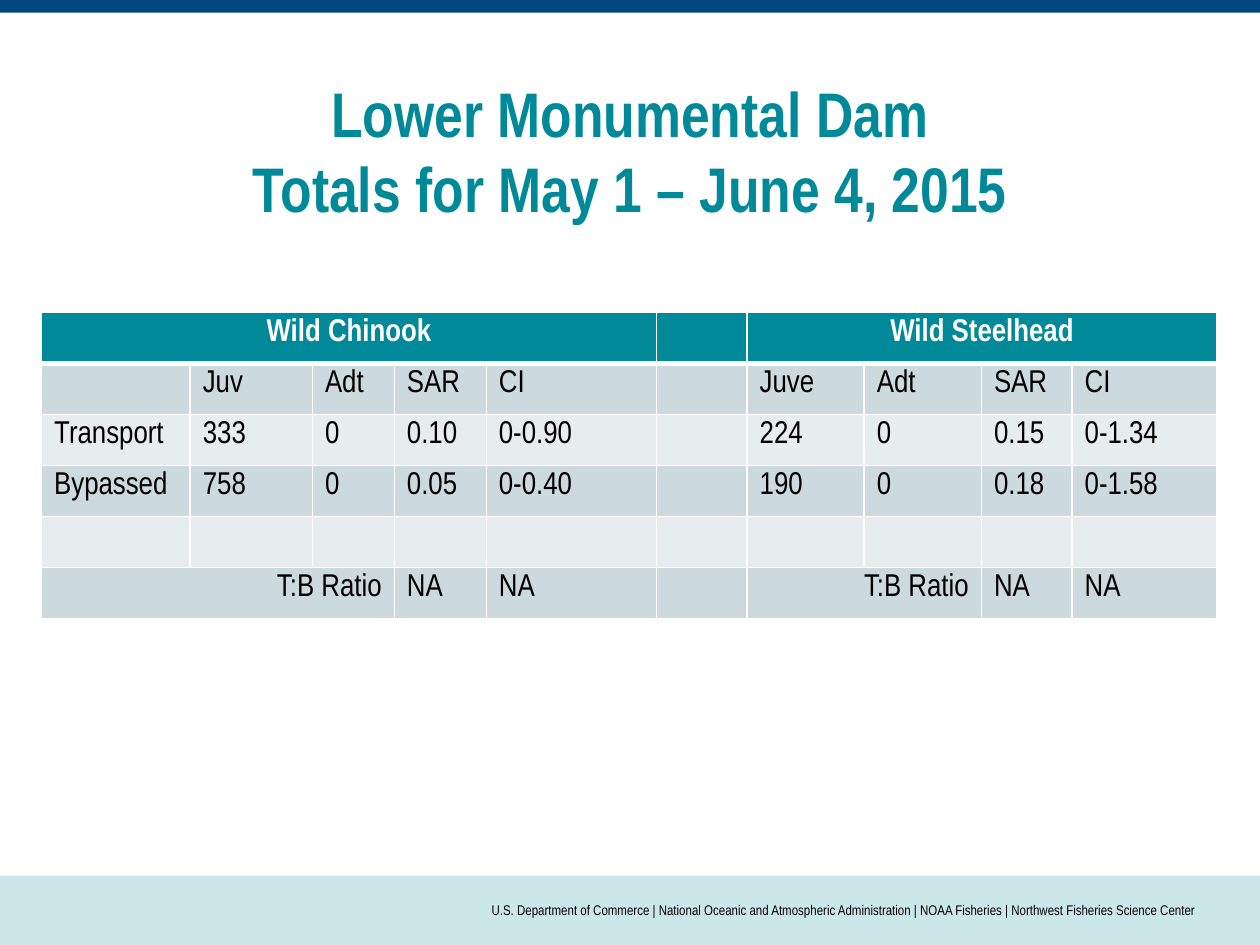
from lxml import etree
from pptx import Presentation
from pptx.dml.color import RGBColor
from pptx.enum import shapes, text
from pptx.oxml import ns
from pptx.util import Inches, Pt

FONT = "Arial Narrow"
WHITE = RGBColor(0xFF, 0xFF, 0xFF)
BLACK = RGBColor(0, 0, 0)
TEAL = RGBColor(0x00, 0x89, 0x98)
NAVY = RGBColor(0x00, 0x46, 0x7F)
PALE_TEAL = RGBColor(0xCC, 0xE7, 0xEA)
BANDS = (RGBColor(0xE7, 0xED, 0xEF), RGBColor(0xCC, 0xDA, 0xDD))

CENTER, RIGHT = text.PP_ALIGN.CENTER, text.PP_ALIGN.RIGHT
TITLE = {"name": FONT, "size": Pt(36), "bold": True}
FOOTER = {"name": FONT, "size": Pt(8), "bold": False}
HEADER = {"name": FONT, "size": Pt(18), "bold": True}
BODY = {"name": FONT, "size": Pt(18), "bold": False}

COLUMN_WIDTHS = (1.18, 0.97, 0.65, 0.73, 1.35, 0.72, 0.93, 0.93, 0.72, 1.15)
ROWS = (
    ("Wild Chinook", "", "", "", "", "", "Wild Steelhead", "", "", ""),
    ("", "Juv", "Adt", "SAR", "CI", "", "Juve", "Adt", "SAR", "CI"),
    ("Transport", "333", "0", "0.10", "0-0.90", "", "224", "0", "0.15", "0-1.34"),
    ("Bypassed", "758", "0", "0.05", "0-0.40", "", "190", "0", "0.18", "0-1.58"),
    ("",) * 10,
    ("T:B Ratio", "", "", "NA", "NA", "", "T:B Ratio", "", "NA", "NA"),
)
MERGES = ((0, 0, 4), (0, 6, 9), (5, 0, 2), (5, 6, 7))


def format_paragraph(para, font_values, color, align=None):
    para.alignment = align
    for name, value in font_values.items():
        setattr(para.font, name, value)
    para.font.color.rgb = color


def add_band(page, top, height, color):
    band = page.shapes.add_shape(
        shapes.MSO_SHAPE.RECTANGLE, 0, Inches(top), Inches(10), Inches(height))
    band.shadow.inherit = False
    band.fill.solid()
    band.fill.fore_color.rgb = color
    band.line.fill.background()


def add_text(page, place, words, font_values, color, align, side_inset=0.1):
    box = page.shapes.add_textbox(*map(Inches, place))
    frame = box.text_frame
    frame.word_wrap = True
    frame.vertical_anchor = text.MSO_ANCHOR.MIDDLE
    frame.margin_left = frame.margin_right = Inches(side_inset)
    para = frame.paragraphs[0]
    para.text = words
    format_paragraph(para, font_values, color, align)


def set_borders(cell, row):
    widths = {"L": 1, "R": 1, "T": 3 if row == 1 else 1, "B": 3 if row == 0 else 1}
    properties = cell._tc.get_or_add_tcPr()
    for position, (side, width) in enumerate(widths.items()):
        line = etree.Element(ns.qn(f"a:ln{side}"), w=str(Pt(width)))
        fill = etree.SubElement(line, ns.qn("a:solidFill"))
        etree.SubElement(fill, ns.qn("a:srgbClr"), val=str(WHITE))
        properties.insert(position, line)


def fill_cell(cell, row, words):
    heading = row == 0
    cell.fill.solid()
    cell.fill.fore_color.rgb = TEAL if heading else BANDS[row % 2]
    set_borders(cell, row)
    cell.text = words
    align = CENTER if heading else RIGHT if words == "T:B Ratio" else None
    format_paragraph(cell.text_frame.paragraphs[0], HEADER if heading else BODY,
                     WHITE if heading else BLACK, align)


def add_totals_table(page):
    place = map(Inches, (0.33, 2.48, 9.35, 2.43))
    table = page.shapes.add_table(len(ROWS), len(COLUMN_WIDTHS), *place).table
    for column, width in zip(table.columns, COLUMN_WIDTHS):
        column.width = Inches(width)
    for row, values in enumerate(ROWS):
        for column, words in enumerate(values):
            fill_cell(table.cell(row, column), row, words)
    for row, first, last in MERGES:
        table.cell(row, first).merge(table.cell(row, last))


def main():
    deck = Presentation()
    deck.slide_width, deck.slide_height = Inches(10), Inches(7.5)
    page = deck.slides.add_slide(deck.slide_layouts[6])
    add_band(page, 6.95, 0.55, PALE_TEAL)
    add_band(page, 0, 0.1, NAVY)
    agencies = ("U.S. Department of Commerce",
                "National Oceanic and Atmospheric Administration",
                "NOAA Fisheries", "Northwest Fisheries Science Center")
    add_text(page, (2.5, 6.95, 7, 0.55), " | ".join(agencies),
             FOOTER, BLACK, RIGHT, side_inset=0)
    add_text(page, (0.5, 0.5, 9, 1.38),
             "Lower Monumental Dam\vTotals for May 1 – June 4, 2015",
             TITLE, TEAL, CENTER)
    add_totals_table(page)
    deck.save("out.pptx")


if __name__ == "__main__":
    main()
